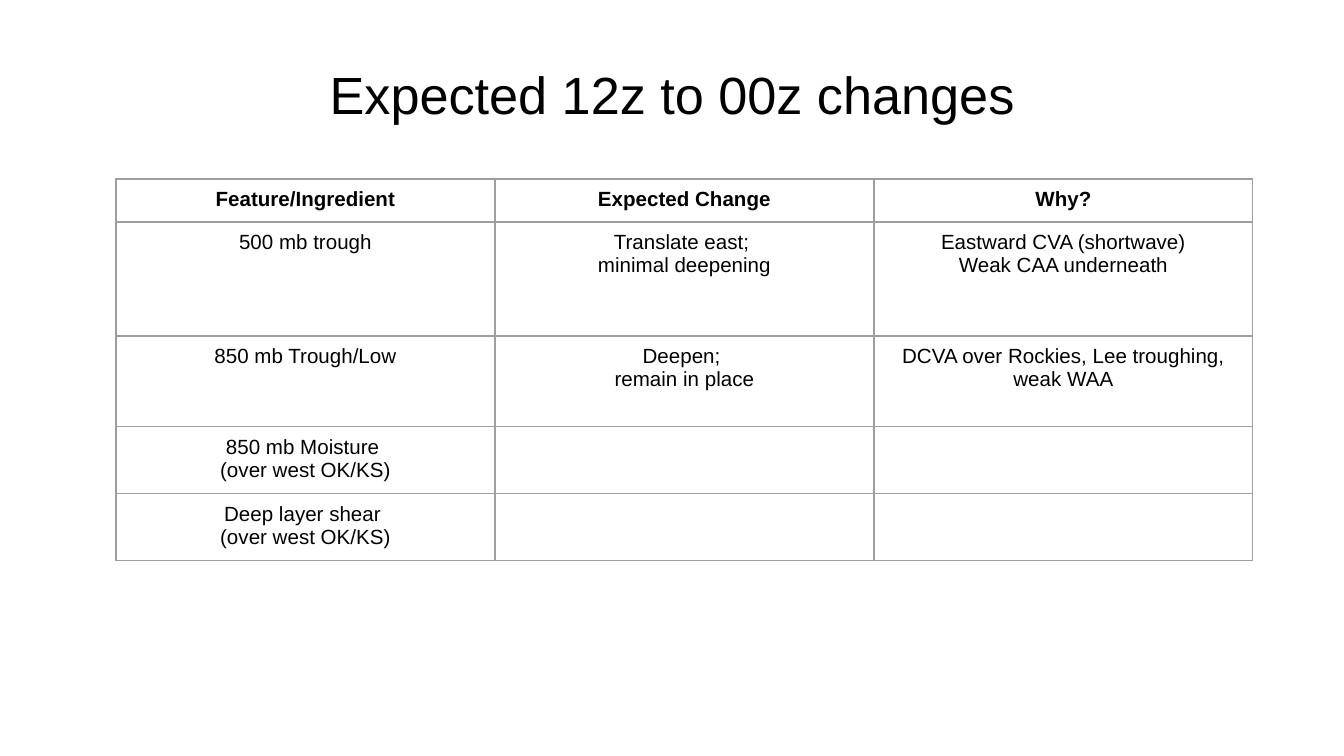
from lxml.etree import SubElement
from pptx import Presentation
from pptx.dml.color import RGBColor
from pptx.enum.text import MSO_ANCHOR as Anchor, PP_ALIGN as Align
from pptx.oxml.ns import qn
from pptx.util import Pt

TITLE = "Expected 12z to 00z changes"
HEADINGS = ["Feature/Ingredient", "Expected Change", "Why?"]
CHANGES = [
    ("500 mb trough", "Translate east; \nminimal deepening",
     "Eastward CVA (shortwave)\nWeak CAA underneath"),
    ("850 mb Trough/Low", "Deepen; \nremain in place",
     "DCVA over Rockies, Lee troughing, weak WAA"),
    ("850 mb Moisture \n(over west OK/KS)", "", ""),
    ("Deep layer shear \n(over west OK/KS)", "", ""),
]
ROW_HEIGHTS = [43, 114, 91, 67, 67]
COLUMN_WIDTH = 379
TABLE_LEFT, TABLE_TOP = 116, 179
INK, BORDER = "000000", "9E9E9E"


def px(count):
    return round(count * 914400 / 134.4)


def color(code):
    return RGBColor.from_string(code)


def write(frame, text, size=11, bold=False, ink=INK):
    frame.text = text
    for paragraph in frame.paragraphs:
        paragraph.alignment = Align.CENTER
        for part in (paragraph, *paragraph.runs):
            part.font.name = "Arial"
            part.font.size = Pt(size)
            part.font.bold = bold
            part.font.color.rgb = color(ink)


def outline(cell):
    properties = cell._tc.get_or_add_tcPr()
    for position, side in enumerate(("lnL", "lnR", "lnT", "lnB")):
        edge = properties.makeelement(qn(f"a:{side}"), {"w": str(Pt(0.75))})
        properties.insert(position, edge)
        fill = SubElement(edge, qn("a:solidFill"))
        SubElement(fill, qn("a:srgbClr"), val=BORDER)


deck = Presentation()
deck.slide_width, deck.slide_height = px(1344), px(756)
slide = deck.slides.add_slide(deck.slide_layouts[5])

title = slide.shapes.title
title.left, title.top, title.width, title.height = map(px, (67, 31, 1210, 126))
title.text_frame.vertical_anchor = Anchor.MIDDLE
write(title.text_frame, TITLE, size=28)

rows = [HEADINGS, *CHANGES]
table = slide.shapes.add_table(
    len(rows), len(HEADINGS), px(TABLE_LEFT), px(TABLE_TOP),
    px(COLUMN_WIDTH * len(HEADINGS)), px(sum(ROW_HEIGHTS))).table
table.horz_banding = False
for column in table.columns:
    column.width = px(COLUMN_WIDTH)

for row_index, (texts, height) in enumerate(zip(rows, ROW_HEIGHTS)):
    table.rows[row_index].height = px(height)
    for column_index, text in enumerate(texts):
        cell = table.cell(row_index, column_index)
        cell.margin_left = cell.margin_right = px(13)
        cell.margin_top = cell.margin_bottom = px(9)
        cell.fill.background()
        outline(cell)
        write(cell.text_frame, text, bold=row_index == 0)

deck.save("out.pptx")
